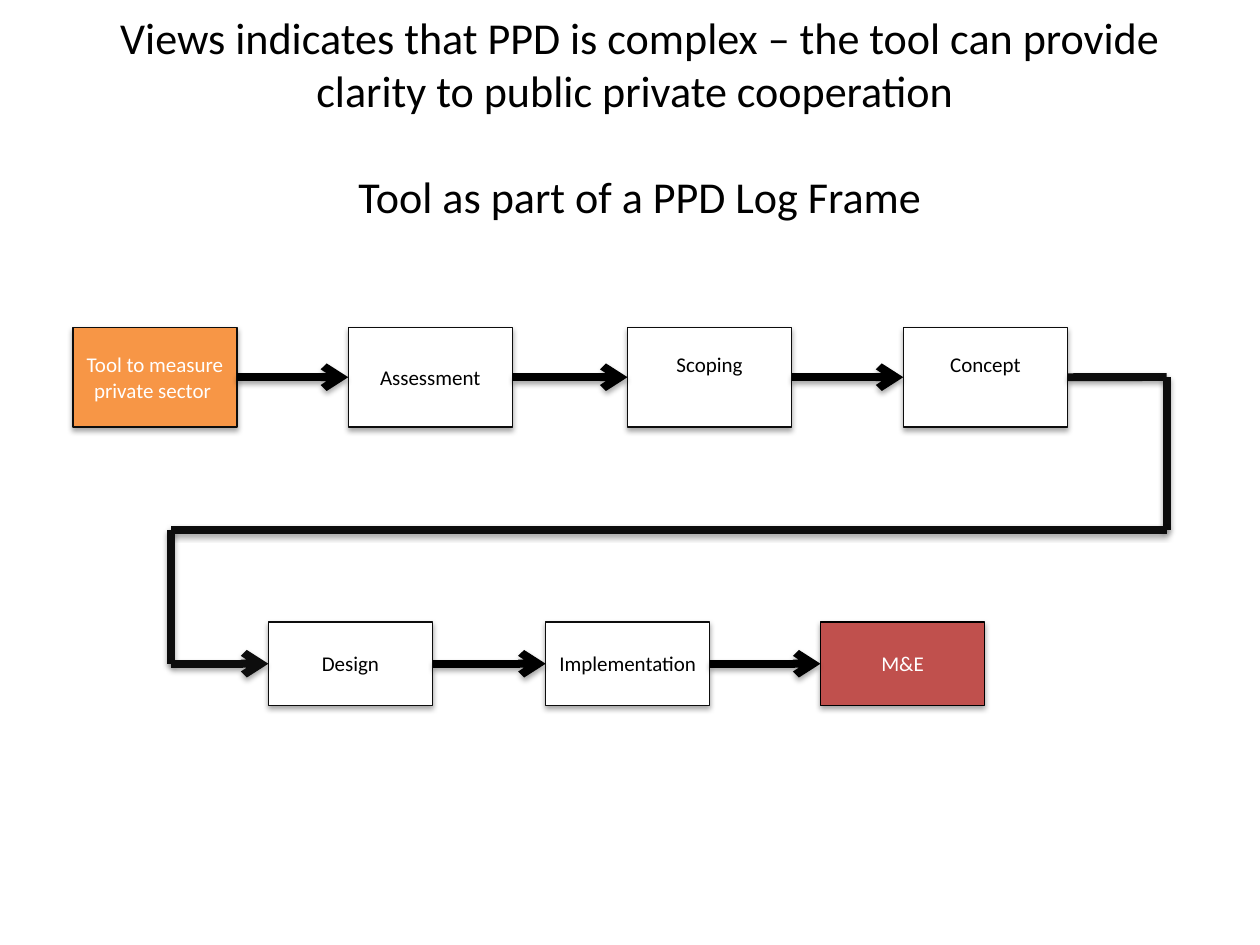
from pptx import Presentation
from pptx.dml.color import RGBColor
from pptx.enum.shapes import MSO_CONNECTOR, MSO_SHAPE
from pptx.enum.text import MSO_ANCHOR, PP_ALIGN
from pptx.oxml import parse_xml
from pptx.oxml.ns import nsdecls
from pptx.util import Cm, Pt

RECT = MSO_SHAPE.RECTANGLE
LINE = MSO_CONNECTOR.STRAIGHT
MID = MSO_ANCHOR.MIDDLE
MIDST = PP_ALIGN.CENTER

BLACK = RGBColor(0x00, 0x00, 0x00)
DARK = RGBColor(0x0D, 0x0D, 0x0D)
WHITE = RGBColor(0xFF, 0xFF, 0xFF)
AMBER = RGBColor(0xF7, 0x96, 0x46)
RED = RGBColor(0xC0, 0x50, 0x4D)

deck = Presentation()
deck.slide_width = Cm(25.4)
deck.slide_height = Cm(19.05)
slide = deck.slides.add_slide(deck.slide_layouts[6])


def write(shape, text, size=12, color=BLACK, gap=0, foot=0.13):
    frame = shape.text_frame
    frame.word_wrap = True
    frame.vertical_anchor = MID
    frame.margin_bottom = Cm(foot)
    for i, part in enumerate(text.split("\n")):
        para = frame.paragraphs[0] if i == 0 else frame.add_paragraph()
        para.alignment = MIDST
        para.space_before = Pt(gap if i else 0)
        run = para.add_run()
        run.text = part
        run.font.name = "Calibri"
        run.font.size = Pt(size)
        run.font.color.rgb = color


def link(start, end, color, arrow):
    line = slide.shapes.add_connector(LINE, *(Cm(v) for v in start + end))
    line.line.color.rgb = color
    line.line.width = Pt(4.5)
    if arrow:
        tail = parse_xml(f'<a:tailEnd {nsdecls("a")} type="arrow"/>')
        line.line._ln.append(tail)
    return line


title = slide.shapes.add_textbox(Cm(1.47), Cm(0.76), Cm(22.86), Cm(3.18))
write(
    title,
    "Views indicates that PPD is complex – the tool can provide "
    "clarity to public private cooperation \nTool as part of a PPD Log Frame",
    size=25.2,
    gap=30.3,
)

WIDE = 3.31
rows = [
    (6.6, 2.01, [
        (1.47, "Tool to measure private sector ", AMBER, WHITE, 0.13),
        (7.02, "Assessment", WHITE, BLACK, 0.13),
        (12.65, "Scoping", WHITE, BLACK, 0.64),
        (18.21, "Concept", WHITE, BLACK, 0.64),
    ]),
    (12.54, 1.68, [
        (5.41, "Design", WHITE, BLACK, 0.13),
        (11, "Implementation", WHITE, BLACK, 0.13),
        (16.54, "M&E", RED, WHITE, 0.13),
    ]),
]

chains = []
for top, high, steps in rows:
    chain = []
    for left, text, fill, ink, foot in steps:
        box = slide.shapes.add_shape(RECT, Cm(left), Cm(top), Cm(WIDE), Cm(high))
        box.fill.solid()
        box.fill.fore_color.rgb = fill
        box.line.color.rgb = BLACK if fill == RED else DARK
        box.line.width = Pt(0.75)
        box.shadow.inherit = False
        write(box, text, color=ink, foot=foot)
        chain.append(box)
    chains.append(chain)

for (top, high, steps), chain in zip(rows, chains):
    mid = top + high / 2
    for i in range(len(chain) - 1):
        line = link((steps[i][0] + WIDE, mid), (steps[i + 1][0], mid), BLACK, True)
        line.begin_connect(chain[i], 3)
        line.end_connect(chain[i + 1], 1)

route = [(21.52, 7.6), (23.52, 7.6), (23.52, 10.69),
         (3.45, 10.69), (3.45, 13.38), (5.41, 13.38)]
last = len(route) - 2
for i in range(last + 1):
    line = link(route[i], route[i + 1], DARK, i == last)
    if i == 0:
        line.begin_connect(chains[0][-1], 3)
    if i == last:
        line.end_connect(chains[1][0], 1)

for shape in list(slide.shapes)[1:]:
    props = shape._element.spPr
    for old in props.findall("{*}effectLst"):
        props.remove(old)
    props.append(parse_xml(
        f'<a:effectLst {nsdecls("a")}>'
        '<a:outerShdw blurRad="40000" dist="23000" dir="5400000" rotWithShape="0">'
        '<a:srgbClr val="000000"><a:alpha val="35000"/></a:srgbClr>'
        '</a:outerShdw></a:effectLst>'
    ))

deck.save("out.pptx")
